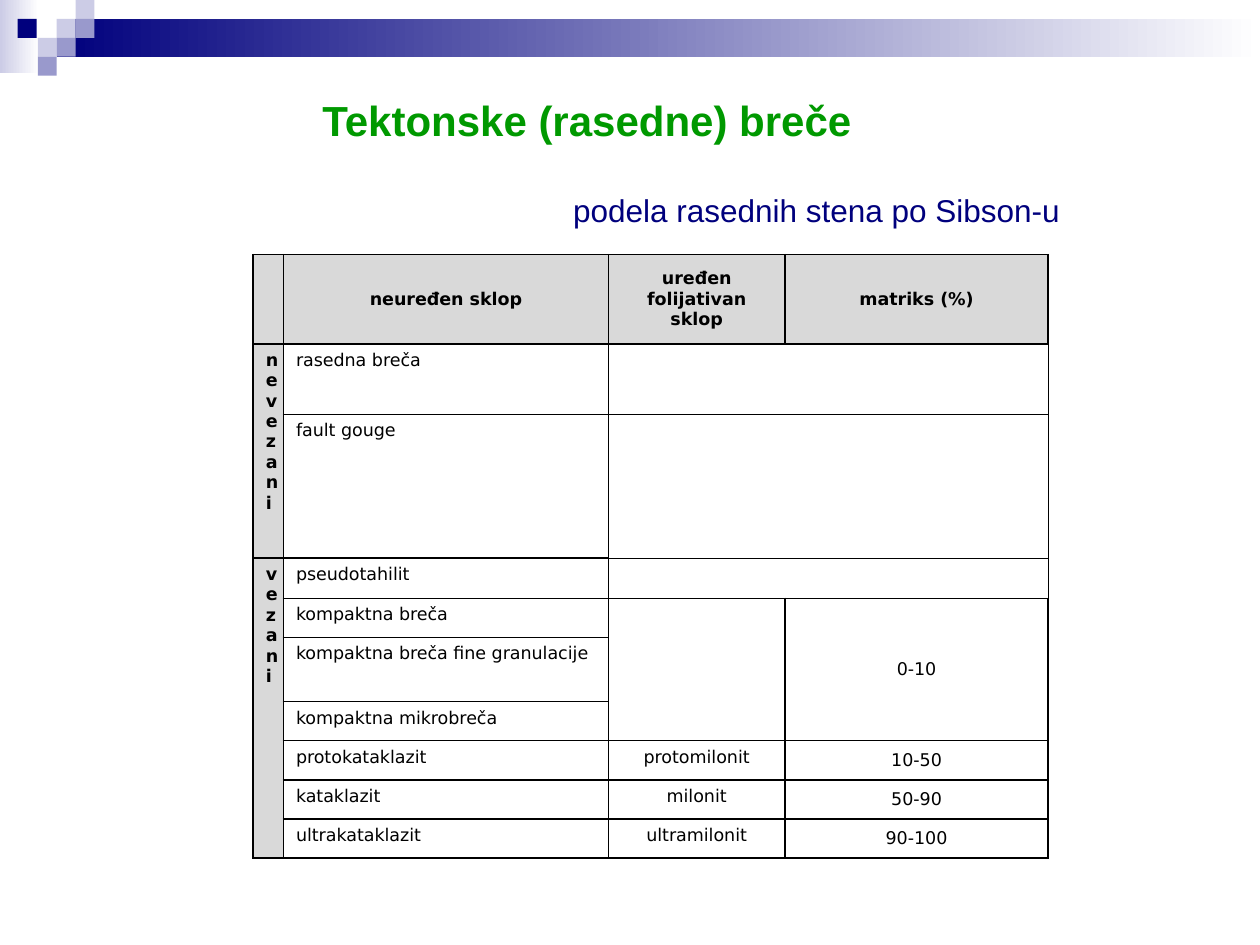
from lxml import etree
from pptx import Presentation
from pptx import util as u
from pptx.dml.color import RGBColor
from pptx.enum import shapes, text
from pptx.oxml import ns

NAVY = RGBColor(0x00, 0x00, 0x7D)
LILAC = RGBColor(0xCC, 0xCC, 0xE6)
VIOLET = RGBColor(0x99, 0x99, 0xCC)
WHITE = RGBColor(0xFF, 0xFF, 0xFF)
GREEN = RGBColor(0x00, 0x99, 0x00)
BLACK = RGBColor(0x00, 0x00, 0x00)
GREY = RGBColor(0xD9, 0xD9, 0xD9)


def write_text(frame, words, size=10, name="DejaVu Sans", color=BLACK, bold=False,
               align=text.PP_ALIGN.LEFT):
    para = frame.paragraphs[0]
    para.alignment = align
    if not words:
        para._p.get_or_add_endParaRPr().set("sz", str(size * 100))
        return
    span = para.add_run()
    span.text = words
    span.font.size = u.Pt(size)
    span.font.name = name
    span.font.color.rgb = color
    span.font.bold = bold


def add_block(left, top, width, height, color, fade_to=None):
    block = page.shapes.add_shape(
        shapes.MSO_SHAPE.RECTANGLE,
        u.Inches(left), u.Inches(top), u.Inches(width), u.Inches(height))
    block.shadow.inherit = False
    block.line.fill.background()
    if fade_to is None:
        block.fill.solid()
        block.fill.fore_color.rgb = color
        return
    block.fill.gradient()
    block.fill.gradient_angle = 0
    for stop, position, shade in zip(block.fill.gradient_stops, (0, 1), (color, fade_to)):
        stop.position = position
        stop.color.rgb = shade


deck = Presentation()
deck.slide_width, deck.slide_height = u.Inches(10), u.Inches(7.5)
page = deck.slides.add_slide(deck.slide_layouts[6])

add_block(0, 0, 0.31, 0.58, LILAC, fade_to=WHITE)
add_block(0.45, 0.15, 9.55, 0.3, NAVY, fade_to=WHITE)
SQUARE = 0.15
for left, top, color in [
    (0.45, 0.15, LILAC), (0.6, 0, LILAC), (0.6, 0.15, VIOLET), (0.3, 0.3, LILAC),
    (0.14, 0.15, NAVY), (0.45, 0.3, VIOLET), (0.3, 0.45, VIOLET),
]:
    add_block(left, top, SQUARE, SQUARE, color)

COLUMNS = [0.23, 2.58, 1.4, 2.09]
HEIGHTS = [0.71, 0.56, 1.14, 0.32, 0.31, 0.51, 0.31, 0.31, 0.31, 0.31]
ROWS = [
    ["", "neuređen sklop", "uređen folijativan sklop", "matriks (%)"],
    ["nevezani", "rasedna breča", "", ""],
    ["", "fault gouge", "", ""],
    ["vezani", "pseudotahilit", "", ""],
    ["", "kompaktna breča", "", "0-10"],
    ["", "kompaktna breča fine granulacije", "", ""],
    ["", "kompaktna mikrobreča", "", ""],
    ["", "protokataklazit", "protomilonit", "10-50"],
    ["", "kataklazit", "milonit", "50-90"],
    ["", "ultrakataklazit", "ultramilonit", "90-100"],
]
MERGES = [(1, 0, 2, 0), (3, 0, 9, 0), (1, 2, 1, 3), (2, 2, 2, 3), (3, 2, 3, 3),
          (4, 2, 6, 2), (4, 3, 6, 3)]

table = page.shapes.add_table(
    len(ROWS), len(COLUMNS), u.Inches(2.01), u.Inches(2.02),
    u.Inches(sum(COLUMNS)), u.Inches(sum(HEIGHTS))).table
table.first_row = table.horz_banding = False
for column, width in zip(table.columns, COLUMNS):
    column.width = u.Inches(width)
for row, height in zip(table.rows, HEIGHTS):
    row.height = u.Inches(height)

for row, entries in enumerate(ROWS):
    for col, words in enumerate(entries):
        cell = table.cell(row, col)
        heading = row == 0 or col == 0
        centred = heading or col > 1
        write_text(cell.text_frame, words, bold=heading,
                   align=text.PP_ALIGN.CENTER if centred else text.PP_ALIGN.LEFT)
        middle = row == 0 or col == 3
        cell.vertical_anchor = text.MSO_ANCHOR.MIDDLE if middle else text.MSO_ANCHOR.TOP
        for side in ("lnL", "lnR", "lnT", "lnB"):
            thin = col > 1 and (side, row) in [
                ("lnR", 1), ("lnB", 1), ("lnT", 2), ("lnR", 2), ("lnB", 2),
                ("lnT", 3), ("lnR", 3)]
            border = etree.SubElement(cell._tc.get_or_add_tcPr(), ns.qn(f"a:{side}"),
                                      w=str(u.Pt(0.75 if thin else 1)))
            paint = etree.SubElement(border, ns.qn("a:solidFill"))
            etree.SubElement(paint, ns.qn("a:srgbClr"), val=str(BLACK))
        if heading:
            cell.fill.solid()
            cell.fill.fore_color.rgb = GREY
        else:
            cell.fill.background()

for top, left, bottom, right in MERGES:
    table.cell(top, left).merge(table.cell(bottom, right))

subtitle = page.shapes.add_textbox(u.Inches(4.45), u.Inches(1.47), u.Inches(4.37), u.Inches(0.4))
subtitle.text_frame.word_wrap = True
subtitle.text_frame.auto_size = text.MSO_AUTO_SIZE.SHAPE_TO_FIT_TEXT
subtitle.text_frame.vertical_anchor = text.MSO_ANCHOR.MIDDLE
write_text(subtitle.text_frame, "podela rasednih stena po Sibson-u", size=18, name="Arial",
           color=NAVY)

title = page.shapes.add_textbox(u.Inches(2.46), u.Inches(0.7), u.Inches(4.43), u.Inches(0.5))
title.text_frame.word_wrap = False
title.text_frame.auto_size = text.MSO_AUTO_SIZE.SHAPE_TO_FIT_TEXT
write_text(title.text_frame, "Tektonske (rasedne) breče", size=24, name="Arial",
           color=GREEN, bold=True)

deck.save("out.pptx")
